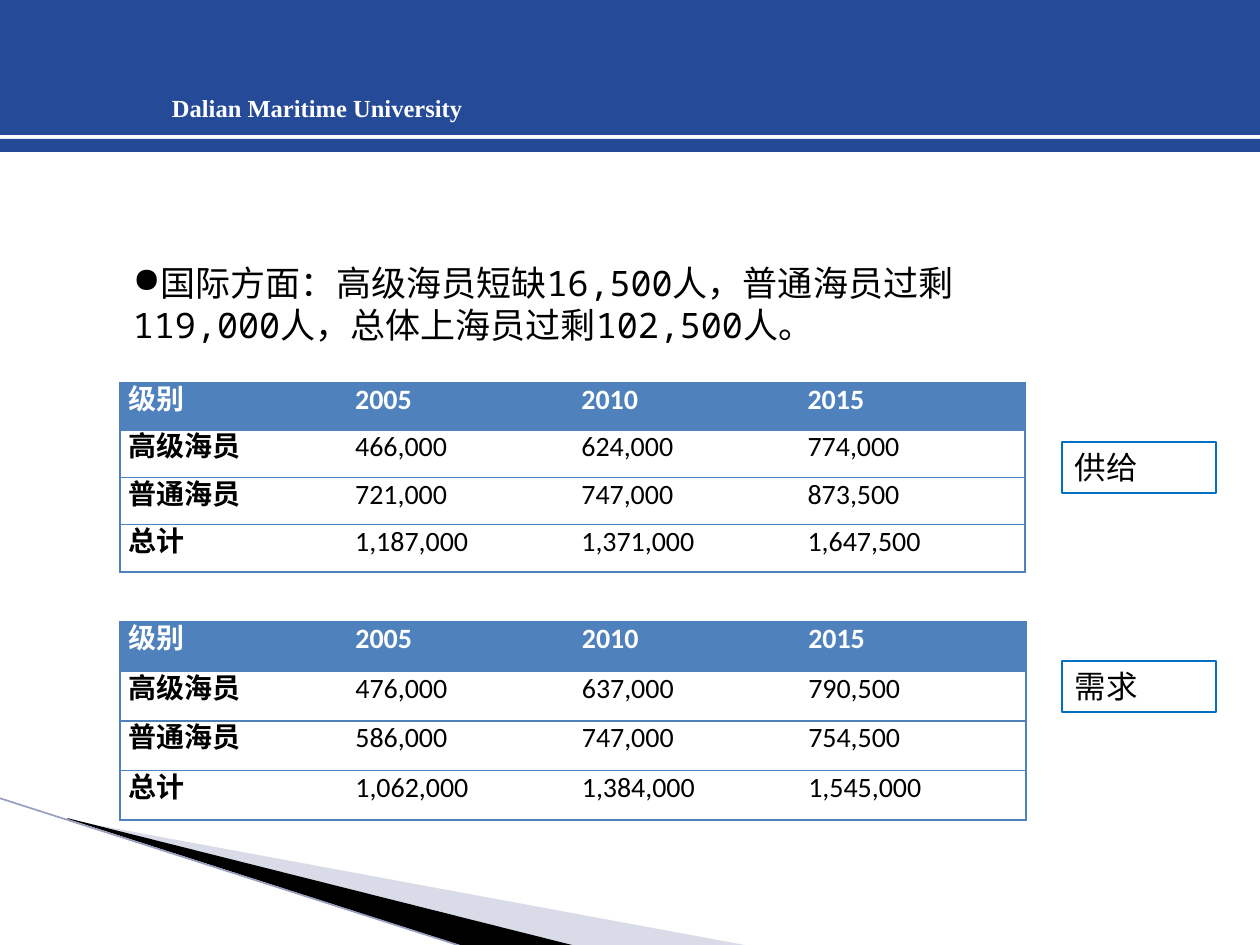
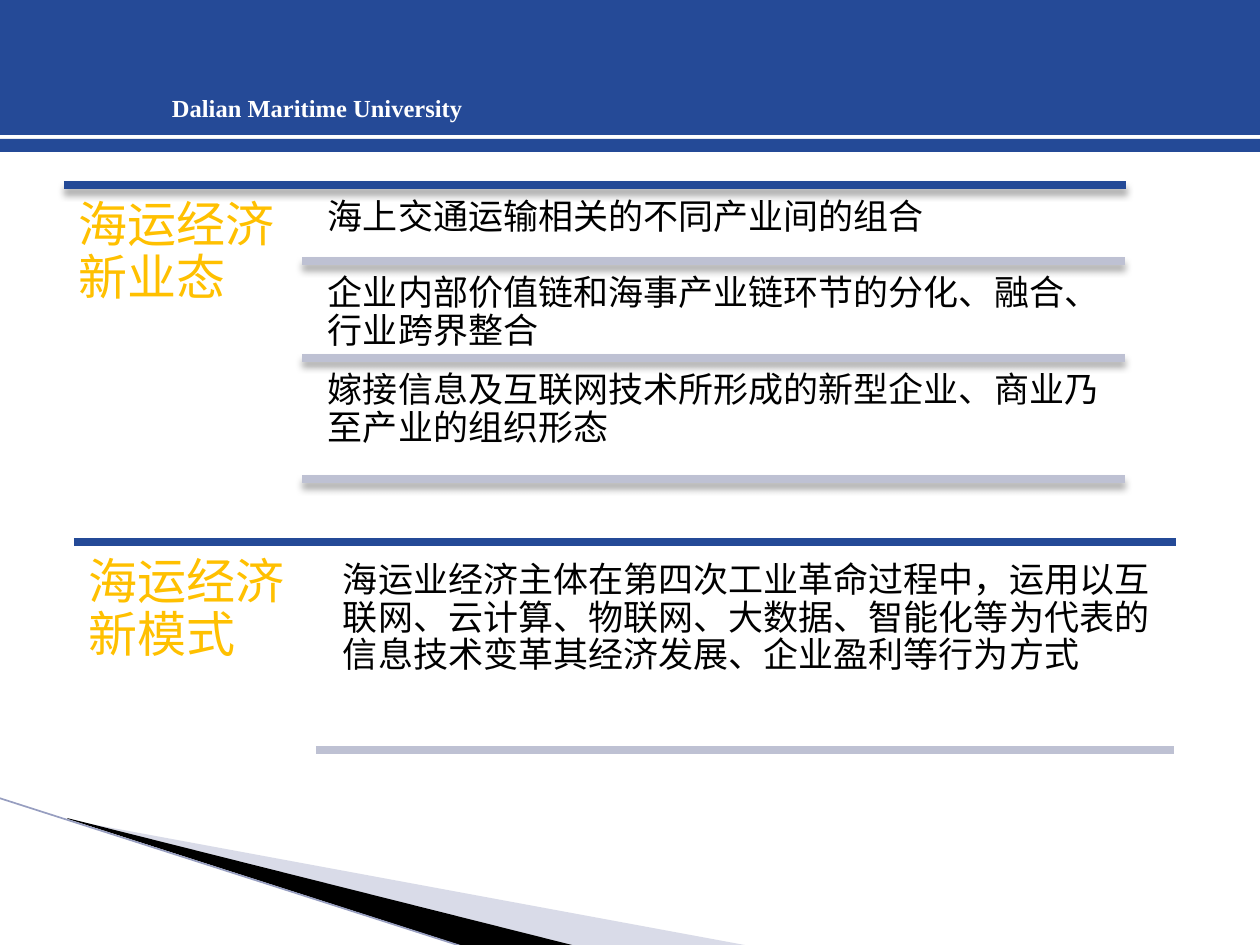
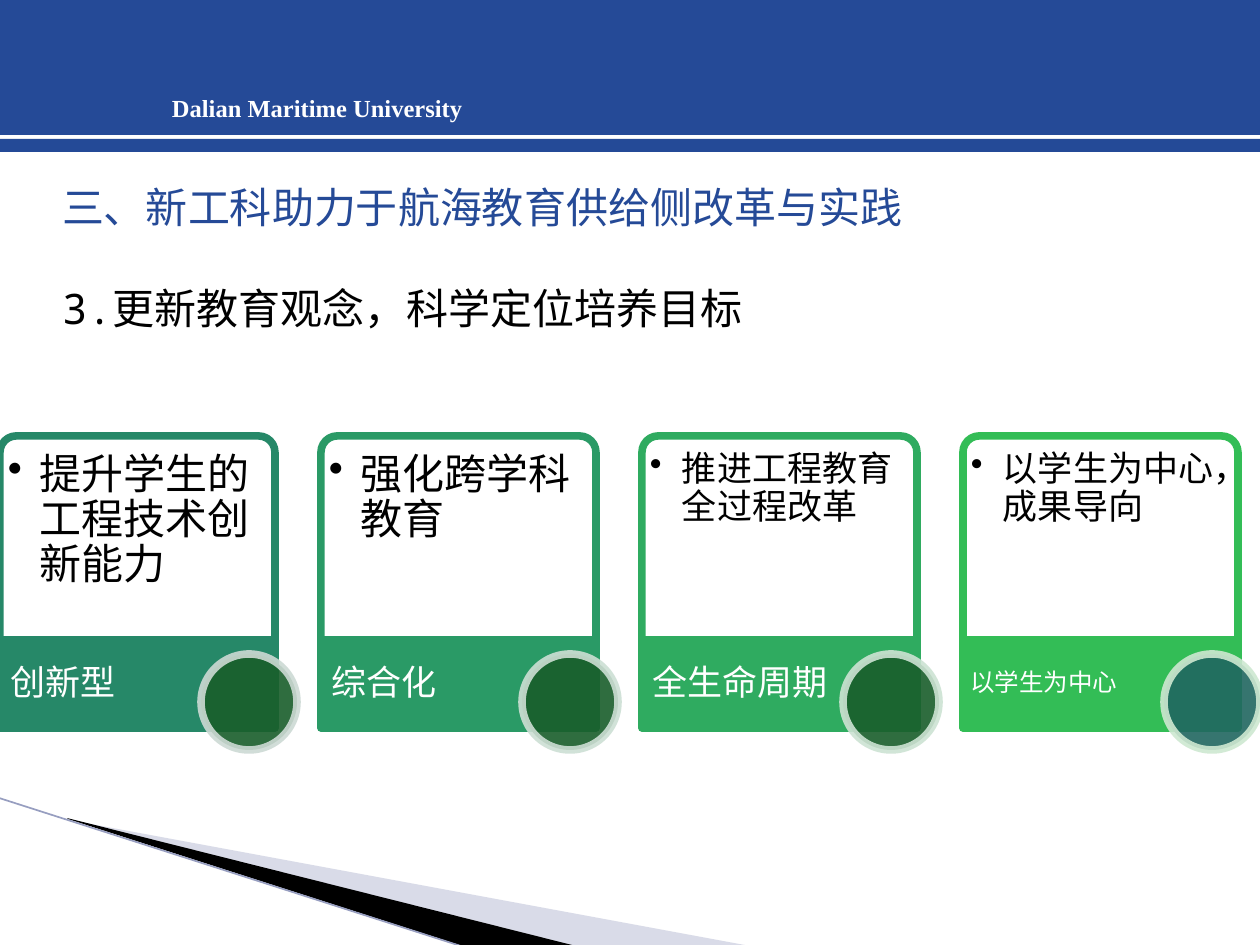
"""Builds three slides on the supply of seafarers and the reform of maritime education."""
import lxml.etree
import pptx
import pptx.dml.color
import pptx.enum.shapes
import pptx.enum.text
import pptx.oxml.ns
import pptx.util

RGB = pptx.dml.color.RGBColor
Shape = pptx.enum.shapes.MSO_SHAPE
Anchor = pptx.enum.text.MSO_ANCHOR
Align = pptx.enum.text.PP_ALIGN
AutoSize = pptx.enum.text.MSO_AUTO_SIZE
qn = pptx.oxml.ns.qn

NAVY = RGB(0x25, 0x4A, 0x97)
RULE_NAVY = RGB(0x24, 0x4A, 0x97)
RULE_GREY = RGB(0xBE, 0xC1, 0xD3)
WEDGE_GREY = RGB(0xA1, 0xA7, 0xC6)
EDGE_GREY = RGB(0x97, 0x9E, 0xC0)
TABLE_BLUE = RGB(0x4F, 0x81, 0xBD)
BOX_BLUE = RGB(0x00, 0x70, 0xC0)
GOLD = RGB(0xFF, 0xC0, 0x00)
DARK_GREEN = RGB(0x19, 0x5E, 0x2B)
TEAL = RGB(0x21, 0x67, 0x60)
BLACK = RGB(0, 0, 0)
WHITE = RGB(255, 255, 255)

SCALE = 914400 / 126
MONO = "Noto Sans Mono"
NO_TABLE_STYLE = "{2D5ABB26-0587-4C30-8999-92F81FD0307C}"
THICK = 4.33
DEFAULT_INSETS = (13, 6, 13, 6)
SMALL_INSETS = (10, 10, 10, 10)
LARGE_INSETS = (15, 15, 15, 15)


def emu(pixels):
    return pptx.util.Emu(round(pixels * SCALE))


def assign(target, values):
    for name, value in values.items():
        setattr(target, name, value)


def add_element(parent, tag, **attributes):
    return lxml.etree.SubElement(parent, qn(tag), attributes)


class Painter:
    """Holds the shared style and the current slide."""

    def __init__(self):
        self.deck = pptx.Presentation()
        assign(self.deck, {"slide_width": emu(1260), "slide_height": emu(945)})
        self.page = None

    def add_page(self, titled=False):
        self.page = self.deck.slides.add_slide(self.deck.slide_layouts[5 if titled else 6])
        self.wedge([(69, 820), (750, 946), (575, 946), (69, 819)], WEDGE_GREY, 40)
        self.wedge([(67, 818), (576, 946), (469, 948), (68, 819)], BLACK)
        self.line((-1, 798), (467, 948), EDGE_GREY, 0.95)
        self.shape(Shape.RECTANGLE, (0, -1, 1260, 136), NAVY)
        self.shape(Shape.RECTANGLE, (0, 139, 1260, 13), RULE_NAVY)
        self.text((159, 87, 325, 42), "Dalian Maritime University", 14, WHITE,
                  name="Times New Roman", bold=True, grow=True)

    def fade(self, parent, alpha):
        for color in parent.iter(qn("a:srgbClr")):
            add_element(color, "a:alpha", val=str(alpha * 1000))

    def paint(self, shape, fill=None, alpha=100, line=None, width=0.75, line_alpha=100):
        shape.shadow.inherit = False
        if fill is None:
            shape.fill.background()
        else:
            shape.fill.solid()
            shape.fill.fore_color.rgb = fill
        if alpha < 100:
            self.fade(shape.element.spPr.find(qn("a:solidFill")), alpha)
        if line is None:
            shape.line.fill.background()
        else:
            shape.line.color.rgb = line
            shape.line.width = pptx.util.Pt(width)
        if line_alpha < 100:
            self.fade(shape.element.spPr.find(qn("a:ln")), line_alpha)

    def wedge(self, points, color, alpha=100):
        builder = self.page.shapes.build_freeform(*points[0], scale=SCALE)
        builder.add_line_segments(points[1:], close=True)
        self.paint(builder.convert_to_shape(), color, alpha)

    def shape(self, kind, frame, fill=None, adjustments=(), **look):
        shape = self.page.shapes.add_shape(kind, *map(emu, frame))
        for index, value in enumerate(adjustments):
            shape.adjustments[index] = value
        self.paint(shape, fill, **look)
        return shape

    def line(self, start, end, color, width=THICK, shadow=False):
        line = self.page.shapes.add_connector(
            pptx.enum.shapes.MSO_CONNECTOR.STRAIGHT, *map(emu, start + end))
        line.line.color.rgb = color
        line.line.width = pptx.util.Pt(width)
        effects = add_element(line.element.spPr, "a:effectLst")
        if shadow:
            outer = add_element(effects, "a:outerShdw", blurRad="50800", dist="38100",
                                dir="5400000", rotWithShape="0")
            color = add_element(outer, "a:srgbClr", val="000000")
            add_element(color, "a:alpha", val="35000")

    def fill_para(self, para, words, size, color, name=MONO, bold=False, indent=None,
                  bullet=None, **layout):
        assign(para, {"alignment": Align.LEFT, **layout})
        properties = para._p.get_or_add_pPr()
        if indent:
            for key, value in zip(("marL", "indent"), indent):
                properties.set(key, str(emu(value)))
        if bullet:
            add_element(properties, "a:buChar", char=bullet)
        span = para.add_run()
        span.text = words
        assign(span.font, {"name": name, "size": pptx.util.Pt(size), "bold": bold})
        span.font.color.rgb = color
        add_element(span._r.get_or_add_rPr(), "a:ea", typeface=name)

    def set_frame(self, frame, insets=DEFAULT_INSETS, anchor=Anchor.TOP, grow=False):
        sides = ("margin_left", "margin_top", "margin_right", "margin_bottom")
        assign(frame, dict(zip(sides, map(emu, insets))))
        fit = AutoSize.SHAPE_TO_FIT_TEXT if grow else AutoSize.NONE
        assign(frame, {"word_wrap": True, "vertical_anchor": anchor, "auto_size": fit})

    def text(self, frame, words, size, color, insets=DEFAULT_INSETS, anchor=Anchor.TOP,
             grow=False, **style):
        box = self.page.shapes.add_textbox(*map(emu, frame))
        self.set_frame(box.text_frame, insets, anchor, grow)
        self.fill_para(box.text_frame.paragraphs[0], words, size, color, **style)

    def title(self, frame, heading, subheading):
        box = self.page.shapes.title
        assign(box, dict(zip(("left", "top", "width", "height"), map(emu, frame))))
        self.set_frame(box.text_frame, grow=True)
        self.fill_para(box.text_frame.paragraphs[0], heading, 24, NAVY, name="Arial",
                       indent=(0, 49))
        self.fill_para(box.text_frame.add_paragraph(), subheading, 24, BLACK,
                       indent=(0, 49), space_before=pptx.util.Pt(29))

    def label(self, frame, words):
        box = self.shape(Shape.RECTANGLE, frame, line=BOX_BLUE)
        self.set_frame(box.text_frame, grow=True)
        self.fill_para(box.text_frame.paragraphs[0], words, 18, BLACK)

    def table(self, frame, rows):
        holder = self.page.shapes.add_table(len(rows), len(rows[0]), *map(emu, frame))
        holder.table.horz_banding = False
        for style in holder.element.iter(qn("a:tableStyleId")):
            style.text = NO_TABLE_STYLE
        last = len(rows[0]) - 1
        for row, values in enumerate(rows):
            for column, words in enumerate(values):
                cell = holder.table.cell(row, column)
                sides = ["a:lnL"] * (column == 0) + ["a:lnR"] * (column == last)
                for side in sides + ["a:lnT", "a:lnB"]:
                    edge = add_element(cell._tc.get_or_add_tcPr(), side, w="12700")
                    fill = add_element(edge, "a:solidFill")
                    add_element(fill, "a:srgbClr", val=str(TABLE_BLUE))
                assign(cell, {"margin_left": emu(9), "margin_right": emu(9),
                              "margin_top": 0, "margin_bottom": 0})
                if row == 0:
                    cell.fill.solid()
                    cell.fill.fore_color.rgb = TABLE_BLUE
                else:
                    cell.fill.background()
                self.fill_para(cell.text_frame.paragraphs[0], words, 16,
                               BLACK if row else WHITE, name="Calibri",
                               bold=row == 0 or column == 0, alignment=Align.JUSTIFY)

    def card(self, left, color, ring, dot, words, size, caption, caption_size):
        self.shape(Shape.ROUND_2_SAME_RECTANGLE, (left, 436, 275, 204), WHITE,
                   adjustments=(0.08, 0), alpha=90, line=color, width=THICK)
        self.text((left + 4, 441, 265, 200), words, size, BLACK,
                  insets=(4, size // 2, 4, 4), level=1, indent=(32, -32), bullet="•",
                  line_spacing=0.9)
        self.shape(Shape.RECTANGLE, (left, 640, 275, 88), color, line=color, width=THICK)
        self.text((left, 640, 193, 88), caption, caption_size, WHITE,
                  insets=(caption_size // 2, 0, 4, 0), anchor=Anchor.MIDDLE,
                  line_spacing=0.9)
        self.shape(Shape.OVAL, (left + 201, 654, 96, 96), dot, alpha=90, line=ring,
                   width=THICK, line_alpha=90)


def build_supply_and_demand(painter):
    painter.add_page()
    painter.text((120, 255, 942, 97),
                 "国际方面：高级海员短缺16,500人，普通海员过剩119,000人，总体上海员过剩102,500人。",
                 20, BLACK, grow=True, indent=(0, 0), bullet="●")
    header = ("级别", "2005", "2010", "2015")
    painter.table((120, 383, 905, 189), [
        header,
        ("高级海员", "466,000", "624,000", "774,000"),
        ("普通海员", "721,000", "747,000", "873,500"),
        ("总计", "1,187,000", "1,371,000", "1,647,500")])
    painter.table((120, 622, 906, 198), [
        header,
        ("高级海员", "476,000", "637,000", "790,500"),
        ("普通海员", "586,000", "747,000", "754,500"),
        ("总计", "1,062,000", "1,384,000", "1,545,000")])
    for top, words in ((442, "供给"), (661, "需求")):
        painter.label((1062, top, 154, 51), words)


def build_new_economy(painter):
    painter.add_page()
    body = {"insets": SMALL_INSETS, "line_spacing": 0.9}
    heading = {"insets": LARGE_INSETS, "line_spacing": 0.9}
    painter.line((64, 185), (1126, 185), RULE_NAVY, shadow=True)
    painter.text((64, 185, 238, 297), "海运经济新业态", 28, GOLD, **heading)
    for top, bottom, words in (
            (189, 261, "海上交通运输相关的不同产业间的组合"),
            (265, 358, "企业内部价值链和海事产业链环节的分化、融合、行业跨界整合"),
            (362, 479, "嫁接信息及互联网技术所形成的新型企业、商业乃至产业的组织形态")):
        painter.text((318, top, 808, bottom - top), words, 20, BLACK, **body)
        painter.line((302, bottom), (1125, bottom), RULE_GREY, shadow=True)
    painter.line((74, 542), (1176, 542), RULE_NAVY)
    painter.text((74, 542, 242, 218), "海运经济新模式", 28, GOLD, **heading)
    painter.text((333, 552, 843, 198),
                 "海运业经济主体在第四次工业革命过程中，运用以互联网、云计算、物联网、大数据、"
                 "智能化等为代表的信息技术变革其经济发展、企业盈利等行为方式",
                 20, BLACK, **body)
    painter.line((316, 750), (1174, 750), RULE_GREY)


def build_training_goals(painter):
    painter.add_page(titled=True)
    painter.title((0, 175, 1260, 165), "三、新工科助力于航海教育供给侧改革与实践",
                  "3.更新教育观念，科学定位培养目标")
    cards = (
        (RGB(0x26, 0x88, 0x68), RGB(0xCD, 0xDA, 0xD4), DARK_GREEN,
         "提升学生的工程技术创新能力", 24, "创新型", 20),
        (RGB(0x2A, 0x9A, 0x66), RGB(0xCD, 0xDF, 0xD4), DARK_GREEN,
         "强化跨学科教育", 24, "综合化", 20),
        (RGB(0x2F, 0xAB, 0x60), RGB(0xCD, 0xE3, 0xD3), DARK_GREEN,
         "推进工程教育全过程改革", 20, "全生命周期", 20),
        (RGB(0x33, 0xBD, 0x56), RGB(0xCE, 0xE8, 0xD1), TEAL,
         "以学生为中心，成果导向", 20, "以学生为中心", 14))
    for index, details in enumerate(cards):
        painter.card(index * 321, *details)


def main():
    painter = Painter()
    build_supply_and_demand(painter)
    build_new_economy(painter)
    build_training_goals(painter)
    painter.deck.save("out.pptx")


if __name__ == "__main__":
    main()
